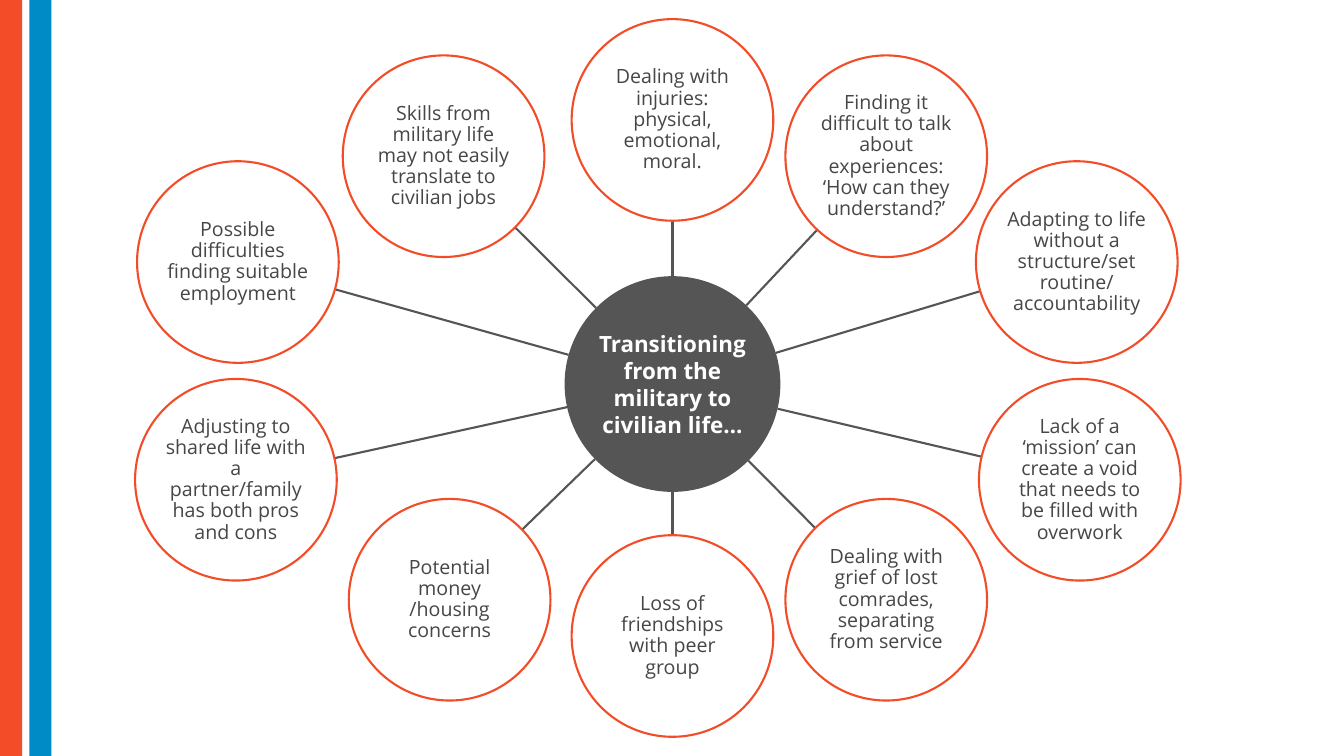
import math

from lxml import etree
from pptx import Presentation
from pptx import util as u
from pptx.dml.color import RGBColor
from pptx.enum import shapes, text
from pptx.oxml.ns import qn

ORANGE = RGBColor(0xF2, 0x4D, 0x28)
BLUE = RGBColor(0x00, 0x8A, 0xC6)
GREY = RGBColor(0x55, 0x55, 0x55)
INK = RGBColor(0x47, 0x46, 0x46)
WHITE = RGBColor(0xFF, 0xFF, 0xFF)

HUB = (6.67, 3.81)
HUB_RADIUS = 1.07
TOPIC_RADIUS = 1.0

TOPICS = [
    (6.67, 1.19, "Dealing with injuries: physical, emotional, moral."),
    (8.79, 1.55, "Finding it difficult to talk about experiences: ‘How can they understand?’"),
    (10.68, 2.6, "Adapting to life without a structure/set routine/ accountability"),
    (10.71, 4.76, "Lack of a ‘mission’ can create a void that needs to be filled with overwork"),
    (8.79, 5.95, "Dealing with grief of lost comrades, separating from service"),
    (6.67, 6.31, "Loss of friendships with peer group"),
    (4.46, 5.95, "Potential money /housing concerns"),
    (2.34, 4.76, "Adjusting to shared life with a partner/family has both pros and cons"),
    (2.36, 2.6, "Possible difficulties finding suitable employment"),
    (4.4, 1.55, "Skills from military life may not easily translate to civilian jobs"),
]


class HubDiagram:
    """Draws a hub-and-spoke diagram in one style on one slide."""

    font_name = "Open Sans"
    line_width = u.Pt(1.5)

    def __init__(self, slide):
        self.slide = slide

    def bar(self, left, color):
        shape = self.slide.shapes.add_shape(
            shapes.MSO_SHAPE.RECTANGLE, u.Inches(left), 0, u.Inches(0.22), u.Inches(7.5))
        shape.shadow.inherit = False
        shape.fill.solid()
        shape.fill.fore_color.rgb = color
        shape.line.fill.background()

    def circle(self, x, y, radius, fill=None, line=None):
        shape = self.slide.shapes.add_shape(
            shapes.MSO_SHAPE.OVAL, u.Inches(x - radius), u.Inches(y - radius),
            u.Inches(2 * radius), u.Inches(2 * radius))
        shape.shadow.inherit = False
        if fill is None:
            shape.fill.background()
        else:
            shape.fill.solid()
            shape.fill.fore_color.rgb = fill
        if line is None:
            shape.line.fill.background()
        else:
            shape.line.color.rgb = line
            shape.line.width = self.line_width
        return shape

    def label(self, shape, words, size, color, bold=False, spacing=1.0):
        frame = shape.text_frame
        frame.word_wrap = True
        frame.auto_size = text.MSO_AUTO_SIZE.NONE
        frame.vertical_anchor = text.MSO_ANCHOR.MIDDLE
        frame.margin_left = frame.margin_right = 0
        frame.margin_top = frame.margin_bottom = 0
        paragraph = frame.paragraphs[0]
        paragraph.alignment = text.PP_ALIGN.CENTER
        paragraph.line_spacing = spacing
        run = paragraph.add_run()
        run.text = words
        run.font.name = self.font_name
        run.font.size = u.Pt(size)
        run.font.bold = bold
        run.font.color.rgb = color

    def hub(self, words):
        self.circle(*HUB, HUB_RADIUS, fill=GREY)
        title = self.slide.shapes.title
        side = HUB_RADIUS * math.sqrt(2)
        title.left = u.Inches(HUB[0] - side / 2)
        title.top = u.Inches(HUB[1] - side / 2)
        title.width = title.height = u.Inches(side)
        self.label(title, words, 16, WHITE, bold=True)
        self.slide.shapes._spTree.append(title._element)

    def spoke(self, x, y):
        angle = math.atan2(y - HUB[1], x - HUB[0])
        across, down = math.cos(angle), math.sin(angle)
        connector = self.slide.shapes.add_connector(
            shapes.MSO_CONNECTOR.STRAIGHT,
            u.Inches(HUB[0] + HUB_RADIUS * across), u.Inches(HUB[1] + HUB_RADIUS * down),
            u.Inches(x - TOPIC_RADIUS * across), u.Inches(y - TOPIC_RADIUS * down))
        connector.line.color.rgb = GREY
        connector.line.width = self.line_width
        etree.SubElement(connector._element.spPr, qn("a:effectLst"))

    def topic(self, x, y, words):
        self.spoke(x, y)
        shape = self.circle(x, y, TOPIC_RADIUS, line=ORANGE)
        self.label(shape, words, 14, INK, spacing=0.9)


def main():
    presentation = Presentation()
    presentation.slide_width = u.Inches(13.33)
    presentation.slide_height = u.Inches(7.5)
    slide = presentation.slides.add_slide(presentation.slide_layouts[5])
    diagram = HubDiagram(slide)
    diagram.bar(0, ORANGE)
    diagram.bar(0.29, BLUE)
    diagram.hub("Transitioning from the military to civilian life…")
    for x, y, words in TOPICS:
        diagram.topic(x, y, words)
    presentation.save("out.pptx")


if __name__ == "__main__":
    main()
